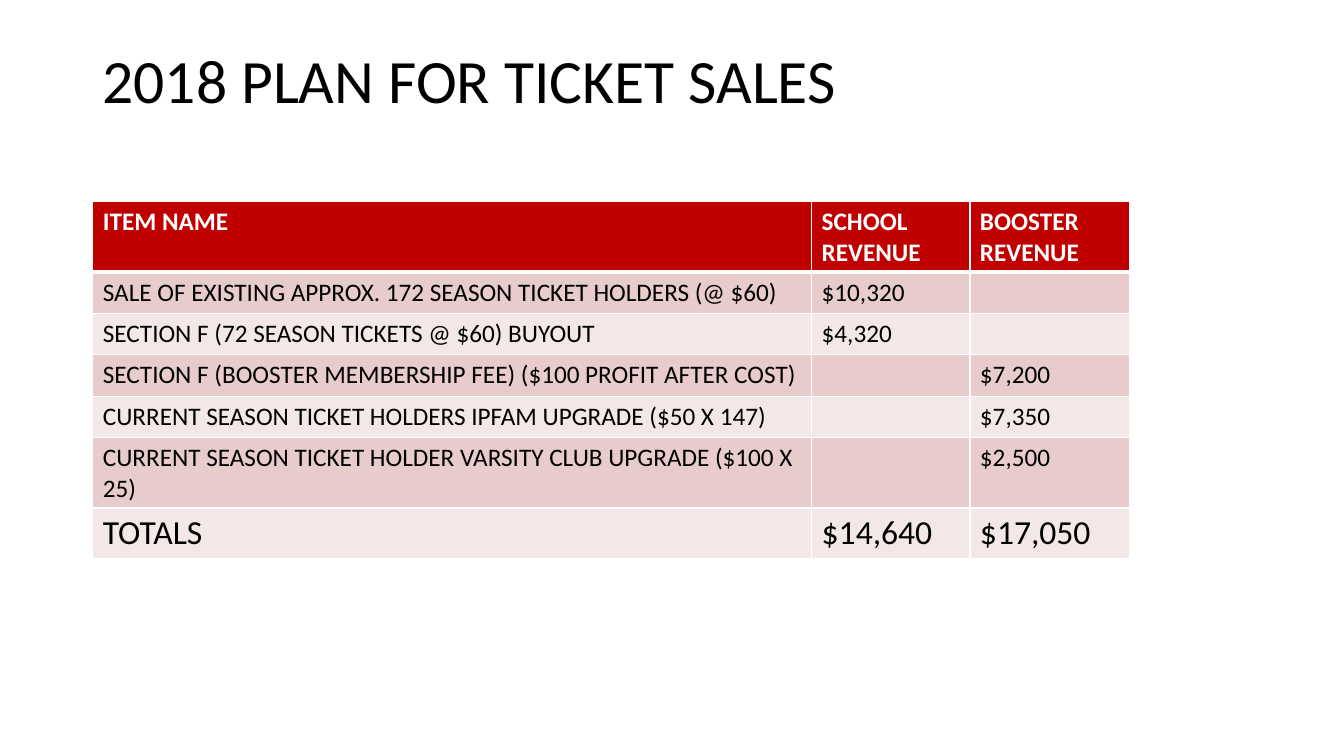
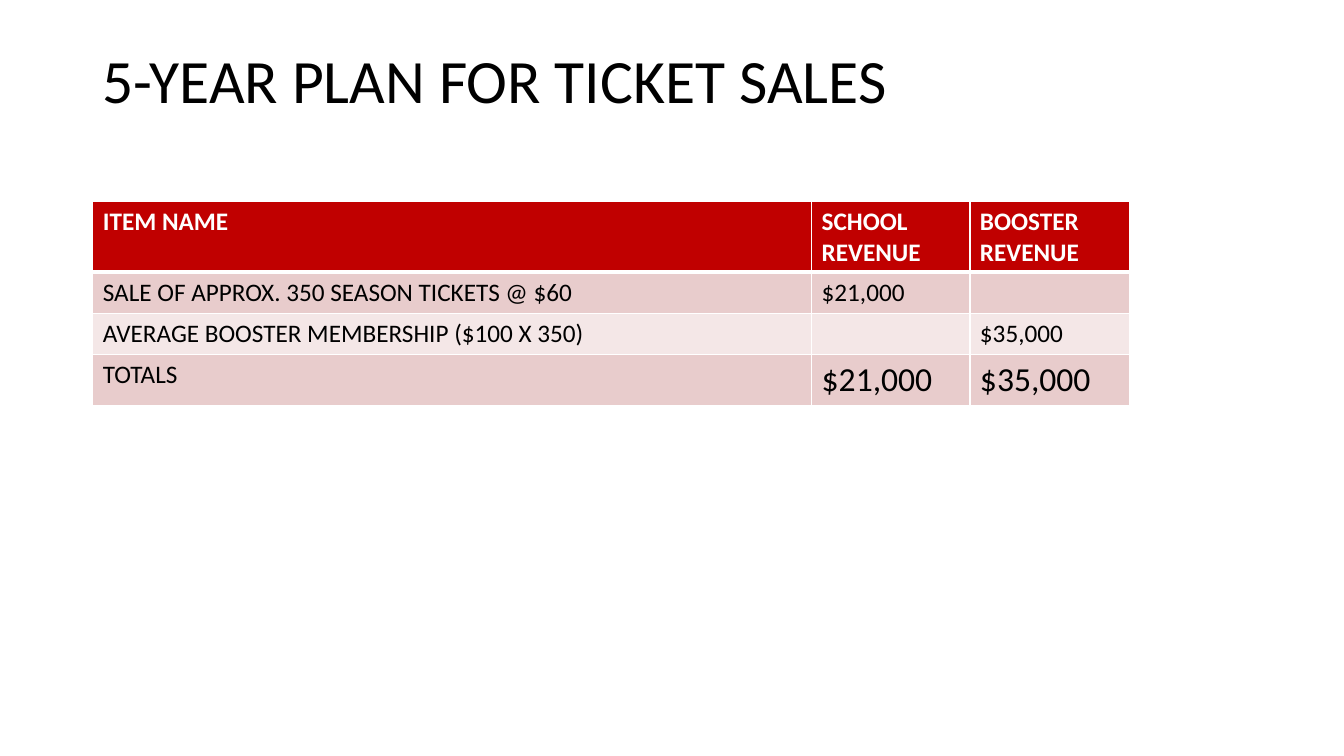
from lxml.etree import SubElement
from pptx import Presentation
from pptx.dml.color import RGBColor
from pptx.enum.text import MSO_ANCHOR
from pptx.oxml.ns import qn
from pptx.util import Inches, Pt

# Shared style
FONT = "Calibri"
BLACK = RGBColor(0x00, 0x00, 0x00)
WHITE = RGBColor(0xFF, 0xFF, 0xFF)
RED = RGBColor(0xC0, 0x00, 0x00)
ROSE = RGBColor(0xE8, 0xCC, 0xCC)
PALE_ROSE = RGBColor(0xF4, 0xE7, 0xE7)
BODY_SIZE, TOTAL_SIZE, TITLE_SIZE = 18, 24, 44

# Shared grid
LEFT = Inches(0.92)
COLUMN_WIDTHS = [Inches(7.13), Inches(1.57), Inches(1.58)]
ROW_HEIGHT = Inches(0.41)
HEADER = ("ITEM NAME", "SCHOOL REVENUE", "BOOSTER REVENUE")

# Each plan: title, item rows, totals row, size of the totals label
PLANS = [
    ("2018 PLAN FOR TICKET SALES", [
        ("SALE OF EXISTING APPROX. 172 SEASON TICKET HOLDERS (@ $60)", "$10,320", ""),
        ("SECTION F (72 SEASON TICKETS @ $60) BUYOUT", "$4,320", ""),
        ("SECTION F (BOOSTER MEMBERSHIP FEE) ($100 PROFIT AFTER COST)", "", "$7,200"),
        ("CURRENT SEASON TICKET HOLDERS IPFAM UPGRADE ($50 X 147)", "", "$7,350"),
        ("CURRENT SEASON TICKET HOLDER VARSITY CLUB UPGRADE ($100 X 25)", "", "$2,500"),
    ], ("TOTALS", "$14,640", "$17,050"), TOTAL_SIZE),
    ("5-YEAR PLAN FOR TICKET SALES", [
        ("SALE OF APPROX. 350 SEASON TICKETS @ $60", "$21,000", ""),
        ("AVERAGE BOOSTER MEMBERSHIP ($100 X 350)", "", "$35,000"),
    ], ("TOTALS", "$21,000", "$35,000"), BODY_SIZE),
]


def style_text(paragraph, size, color, bold=False):
    for span in paragraph.runs:
        span.font.name = FONT
        span.font.size = Pt(size)
        span.font.bold = bold
        span.font.color.rgb = color


def add_borders(cell, top, bottom):
    properties = cell._tc.get_or_add_tcPr()
    for side, width in (("L", 1), ("R", 1), ("T", top), ("B", bottom)):
        line = SubElement(properties, qn(f"a:ln{side}"), w=str(Pt(width)))
        fill = SubElement(line, qn("a:solidFill"))
        SubElement(fill, qn("a:srgbClr"), val=str(WHITE))


deck = Presentation()
deck.slide_width, deck.slide_height = Inches(13.33), Inches(7.5)

for title, items, totals, label_size in PLANS:
    page = deck.slides.add_slide(deck.slide_layouts[6])

    # Title
    box = page.shapes.add_textbox(LEFT, Inches(0.4), Inches(11.5), Inches(0.85))
    box.text_frame.word_wrap = True
    box.text_frame.vertical_anchor = MSO_ANCHOR.MIDDLE
    box.text_frame.text = title
    heading = box.text_frame.paragraphs[0]
    heading.line_spacing = 0.9
    style_text(heading, TITLE_SIZE, BLACK)

    # Revenue table
    rows = [HEADER, *items, totals]
    table = page.shapes.add_table(
        len(rows), len(HEADER), LEFT, Inches(2),
        sum(COLUMN_WIDTHS), ROW_HEIGHT * len(rows)).table
    for column, width in zip(table.columns, COLUMN_WIDTHS):
        column.width = width

    for row_index, values in enumerate(rows):
        is_header = row_index == 0
        band = RED if is_header else ROSE if row_index % 2 else PALE_ROSE
        for column_index, value in enumerate(values):
            cell = table.cell(row_index, column_index)
            cell.text_frame.text = value
            size = BODY_SIZE
            if values is totals:
                size = TOTAL_SIZE if column_index else label_size
            style_text(cell.text_frame.paragraphs[0], size,
                       WHITE if is_header else BLACK, is_header)
            # A thick rule parts the header from the items
            add_borders(cell, top=3 if row_index == 1 else 1,
                        bottom=3 if is_header else 1)
            cell.fill.solid()
            cell.fill.fore_color.rgb = band

deck.save("out.pptx")
